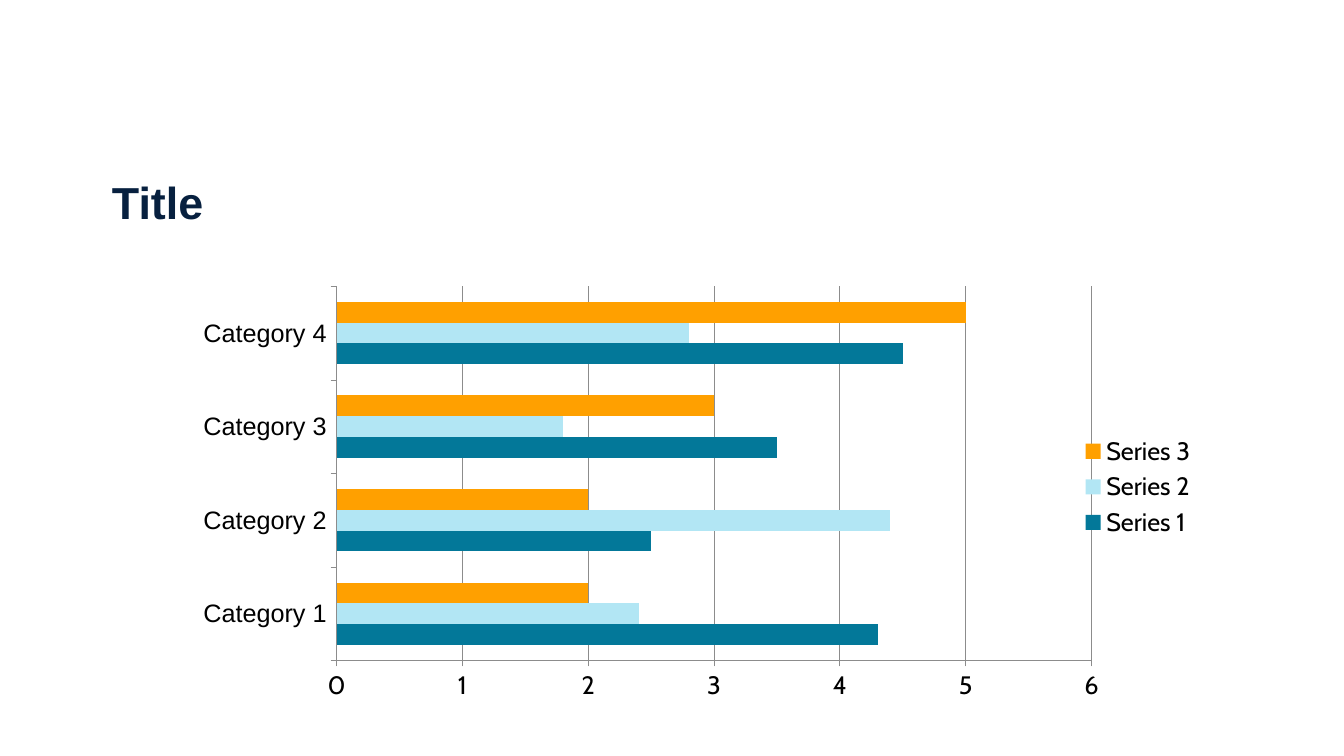
import pptx
import pptx.chart.data
import pptx.dml.color
import pptx.enum.chart
import pptx.enum.text
import pptx.oxml
import pptx.oxml.ns
import pptx.util
from dataclasses import dataclass

Inches = pptx.util.Inches
Pt = pptx.util.Pt
RGB = pptx.dml.color.RGBColor.from_string


@dataclass
class Theme:
    navy: str = "07203F"
    black: str = "000000"
    gray: str = "8C8C8C"
    teal: str = "037899"
    pale: str = "B2E6F4"
    amber: str = "FFA000"
    head: str = "Arial"
    body: str = "Cabin"
    big: int = 32
    small: int = 18
    rule: float = 0.5


theme = Theme()


def set_font(font, name, size, color):
    font.name = name
    font.size = Pt(size)
    font.color.rgb = RGB(color)


def set_line(line):
    line.color.rgb = RGB(theme.gray)
    line.width = Pt(theme.rule)


# Slide
deck = pptx.Presentation()
deck.slide_width = Inches(13.33)
deck.slide_height = Inches(7.5)
slide = deck.slides.add_slide(deck.slide_layouts[5])

# Title
title = slide.shapes.title
title.left, title.top = Inches(1.01), Inches(1.68)
title.width, title.height = Inches(6.63), Inches(0.64)
frame = title.text_frame
frame.text = "Title"
frame.word_wrap = True
frame.auto_size = pptx.enum.text.MSO_AUTO_SIZE.SHAPE_TO_FIT_TEXT
frame.vertical_anchor = pptx.enum.text.MSO_ANCHOR.TOP
para = frame.paragraphs[0]
para.alignment = pptx.enum.text.PP_ALIGN.LEFT
set_font(para.font, theme.head, theme.big, theme.navy)
para.font.bold = True

# Chart data
rows = [
    ("Series 1", (4.3, 2.5, 3.5, 4.5), theme.teal),
    ("Series 2", (2.4, 4.4, 1.8, 2.8), theme.pale),
    ("Series 3", (2, 2, 3, 5), theme.amber),
]
data = pptx.chart.data.CategoryChartData()
data.categories = [f"Category {n}" for n in range(1, 5)]
for name, vals, color in rows:
    data.add_series(name, vals)

# Bar chart
chart = slide.shapes.add_chart(
    pptx.enum.chart.XL_CHART_TYPE.BAR_CLUSTERED,
    Inches(1.57), Inches(2.62), Inches(10.4), Inches(4.42), data,
).chart
chart.has_title = False
set_font(chart.font, theme.body, theme.small, theme.black)
plot = chart.plots[0]
plot.gap_width = 150
plot.overlap = 0
plot.vary_by_categories = False
for bar, (name, vals, color) in zip(plot.series, rows):
    bar.format.fill.solid()
    bar.format.fill.fore_color.rgb = RGB(color)

# Axes
for axis, face in ((chart.category_axis, theme.head), (chart.value_axis, theme.body)):
    axis.major_tick_mark = pptx.enum.chart.XL_TICK_MARK.OUTSIDE
    axis.minor_tick_mark = pptx.enum.chart.XL_TICK_MARK.NONE
    set_font(axis.tick_labels.font, face, theme.small, theme.black)
    set_line(axis.format.line)
scale = chart.value_axis
scale.minimum_scale, scale.maximum_scale, scale.major_unit = 0, 6, 1
scale.has_major_gridlines = True
set_line(scale.major_gridlines.format.line)

# Legend
chart.has_legend = True
chart.legend.position = pptx.enum.chart.XL_LEGEND_POSITION.RIGHT
chart.legend.include_in_layout = False
set_font(chart.legend.font, theme.body, theme.small, theme.black)

# Inner plot area
qn = pptx.oxml.ns.qn
area = chart.element.find(".//" + qn("c:plotArea"))
for old in area.findall(qn("c:layout")):
    area.remove(old)
marks = (
    ("layoutTarget", "inner"), ("xMode", "edge"), ("yMode", "edge"),
    ("x", 0.17), ("y", 0.05), ("w", 0.72), ("h", 0.84),
)
inner = "".join(f'<c:{tag} val="{val}"/>' for tag, val in marks)
area.insert(0, pptx.oxml.parse_xml(
    f'<c:layout {pptx.oxml.ns.nsdecls("c")}><c:manualLayout>{inner}</c:manualLayout></c:layout>'
))

deck.save("out.pptx")
